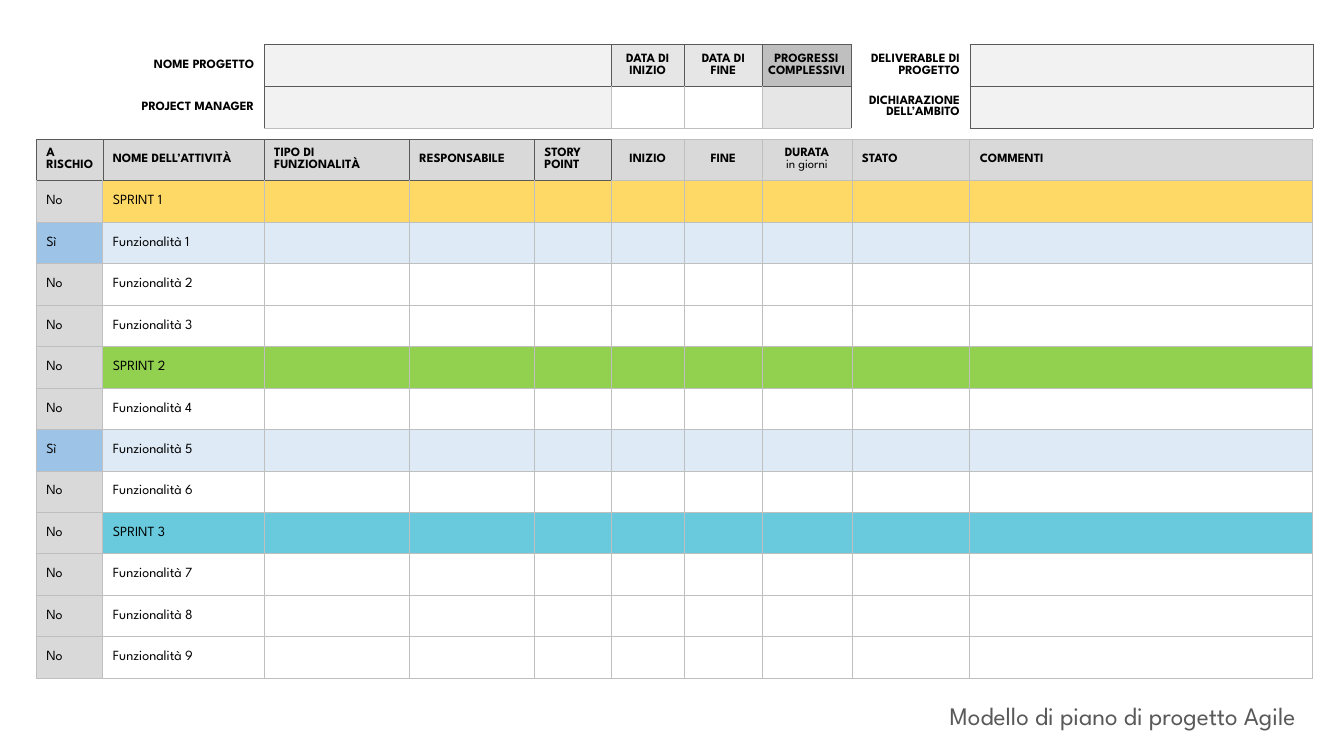
"""Build the Agile project plan slide with its project header and task grid."""
import pptx
import pptx.dml.color
import pptx.enum.text
import pptx.oxml
import pptx.oxml.ns
import pptx.util

Inches = pptx.util.Inches
ALIGN = pptx.enum.text.PP_ALIGN
MIDDLE = pptx.enum.text.MSO_ANCHOR.MIDDLE

TITLE = "Modello di piano di progetto Agile "
HEADS = [
    ("A RISCHIO", "left"), ("NOME DELL’ATTIVITÀ", "left"),
    ("TIPO DI FUNZIONALITÀ", "left"), ("RESPONSABILE", "left"),
    ("STORY POINT", "left"), ("INIZIO", "mid"), ("FINE", "mid"),
    ("DURATA\nin giorni", "mid"), ("STATO", "left"), ("COMMENTI", "left"),
]
TASKS = [
    ("No", "SPRINT 1", "gold"), ("Sì", "Funzionalità 1", "pale"),
    ("No", "Funzionalità 2", "white"), ("No", "Funzionalità 3", "white"),
    ("No", "SPRINT 2", "green"), ("No", "Funzionalità 4", "white"),
    ("Sì", "Funzionalità 5", "pale"), ("No", "Funzionalità 6", "white"),
    ("No", "SPRINT 3", "teal"), ("No", "Funzionalità 7", "white"),
    ("No", "Funzionalità 8", "white"), ("No", "Funzionalità 9", "white"),
]
TOP = [
    [("NOME PROGETTO", "right", None), ("", "left", "light"),
     ("DATA DI INIZIO", "mid", "soft"), ("DATA DI FINE", "mid", "soft"),
     ("PROGRESSI COMPLESSIVI", "mid", "rule"),
     ("DELIVERABLE DI PROGETTO", "right", None), ("", "left", "light")],
    [("PROJECT MANAGER", "right", None), ("", "left", "light"),
     ("", "left", "white"), ("", "left", "white"), ("", "left", "soft"),
     ("DICHIARAZIONE DELL’AMBITO", "right", None), ("", "left", "light")],
]
PLAN_BOX = (0.36, 1.38, 12.66, 5.35)
PLAN_COLS = [0.66, 1.6, 1.44, 1.24, 0.76, 0.73, 0.77, 0.89, 1.17, 3.4]
TOP_BOX = (0.81, 0.44, 12.21, 0.83)
TOP_COLS = [1.81, 3.44, 0.73, 0.77, 0.88, 1.18, 3.4]
TITLE_BOX = (5.82, 6.9, 7.19, 0.4)
THEME = {
    "font": "League Spartan", "head": 9, "body": 10, "title": 18,
    "ink": "000000", "dark": "595959", "rule": "BFBFBF", "grey": "D9D9D9",
    "soft": "E7E6E6", "light": "F2F2F2", "white": "FFFFFF", "gold": "FFD966",
    "green": "92D050", "teal": "68CADC", "pale": "DEEBF7", "blue": "9DC3E6",
}
SIDES = {"left": ALIGN.LEFT, "mid": ALIGN.CENTER, "right": ALIGN.RIGHT}
WIDTHS = {"dark": 0.25, "rule": 0.5}


def tint(name):
    return pptx.dml.color.RGBColor.from_string(THEME[name])


def write(para, text, size, bold, ink="ink"):
    for at, line in enumerate(text.split("\n")):
        if at:
            para.add_line_break()
        run = para.add_run()
        run.text = line
        form = {"name": THEME["font"], "size": pptx.util.Pt(THEME[size]),
                "bold": bold and at == 0}
        for key, value in form.items():
            setattr(run.font, key, value)
        run.font.color.rgb = tint(ink)


def border(cell, edges):
    props = cell._tc.get_or_add_tcPr()
    for at, (side, name) in enumerate(zip("LRTB", edges)):
        width = pptx.util.Pt(WIDTHS.get(name, 0))
        paint = (f'<a:solidFill><a:srgbClr val="{THEME[name]}"/></a:solidFill>'
                 if name else "<a:noFill/>")
        props.insert(at, pptx.oxml.parse_xml(
            f'<a:ln{side} {pptx.oxml.ns.nsdecls("a")} w="{width}">'
            f"{paint}</a:ln{side}>"))


def plan_edge(row, col):
    head = row == 0 and col < 5
    left = "dark" if row == 0 and col < 6 else "rule"
    top = "dark" if row < 2 and col < 5 else "rule"
    side = "dark" if head else "rule"
    return left, side, top, side


def top_edge(row, col):
    if col == 0:
        return None, "dark", None, None
    if col == 5:
        return "dark", "dark", None, None
    if row == 1 and col < 5:
        return ("dark" if col == 1 else "rule",
                "dark" if col == 4 else "rule", "dark", "rule")
    return ("dark",) * 4


def grid(slide, box, cols, rows, edge, tight):
    table = slide.shapes.add_table(
        len(rows), len(cols), *map(Inches, box)).table
    table.first_row = table.horz_banding = False
    for part, width in zip(table.columns, cols):
        part.width = Inches(width)
    for r, row in enumerate(rows):
        table.rows[r].height = Inches(box[3] / len(rows))
        for c, (text, side, fill, size, bold) in enumerate(row):
            cell = table.cell(r, c)
            form = {"vertical_anchor": MIDDLE, **tight.get((r, c), {})}
            for key, value in form.items():
                setattr(cell, key, value)
            if fill:
                cell.fill.solid()
                cell.fill.fore_color.rgb = tint(fill)
            else:
                cell.fill.background()
            border(cell, edge(r, c))
            para = cell.text_frame.paragraphs[0]
            para.alignment = SIDES[side]
            if text:
                write(para, text, size, bold)


def main():
    deck = pptx.Presentation()
    deck.slide_width, deck.slide_height = Inches(13.33), Inches(7.5)
    slide = deck.slides.add_slide(deck.slide_layouts[6])

    frame = slide.shapes.add_textbox(*map(Inches, TITLE_BOX)).text_frame
    frame.word_wrap = True
    frame.auto_size = pptx.enum.text.MSO_AUTO_SIZE.SHAPE_TO_FIT_TEXT
    frame.paragraphs[0].alignment = ALIGN.RIGHT
    write(frame.paragraphs[0], TITLE, "title", False, "dark")

    plan = [[(text, side, "grey", "head", True) for text, side in HEADS]]
    for risk, name, fill in TASKS:
        flag = "blue" if risk == "Sì" else "grey"
        texts = [name] + [""] * (len(HEADS) - 2)
        plan.append([(risk, "left", flag, "body", False)] + [
            (text, "left", fill, "body", False) for text in texts])
    tight = {(r, 0): {"margin_right": 0} for r in range(len(plan))}
    grid(slide, PLAN_BOX, PLAN_COLS, plan, plan_edge, tight)

    top = [[(*cell, "head", True) for cell in row] for row in TOP]
    slim = {"margin_left": Inches(0.04), "margin_right": Inches(0.04)}
    grid(slide, TOP_BOX, TOP_COLS, top, top_edge, {(0, 4): slim})
    deck.save("out.pptx")


if __name__ == "__main__":
    main()
